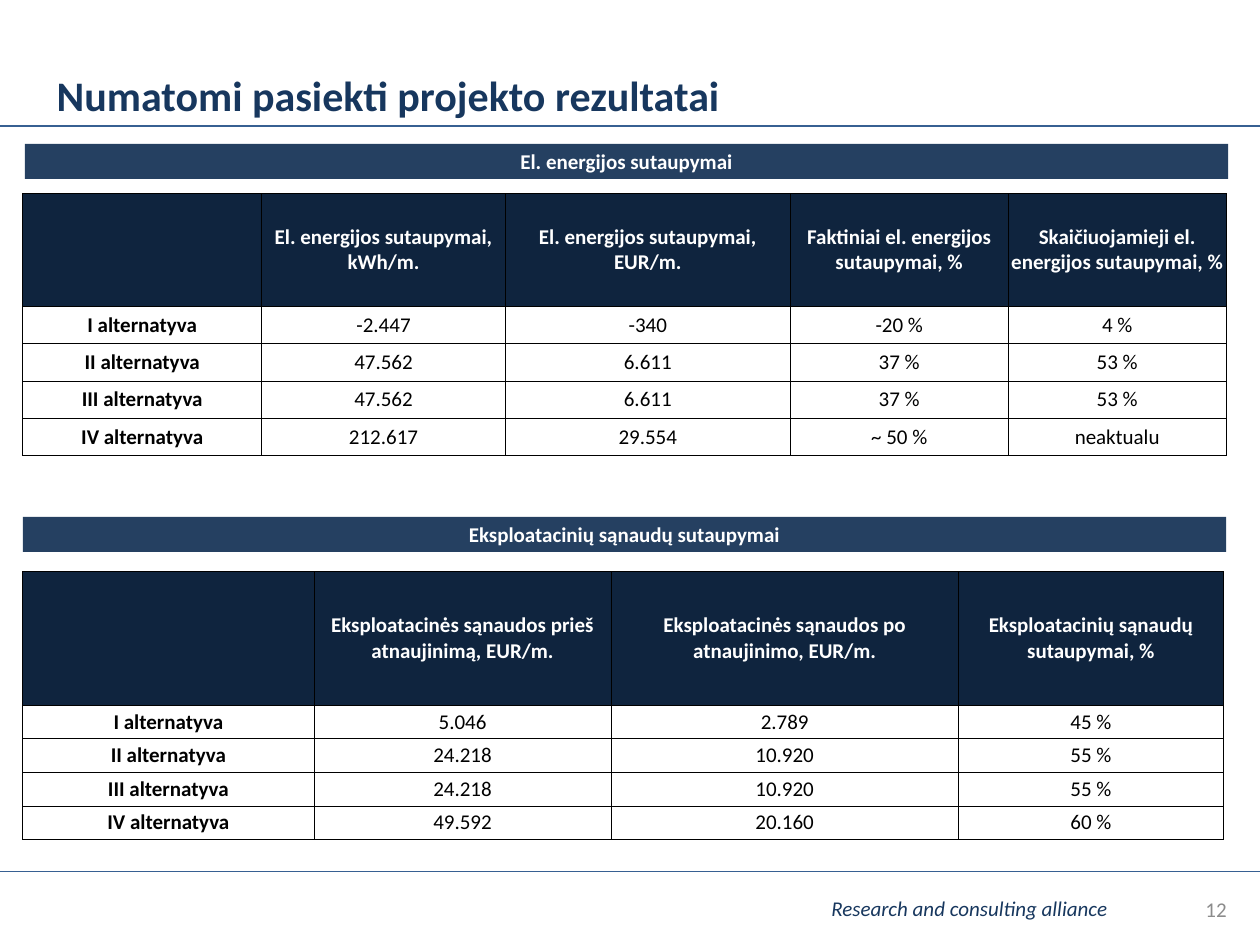
from pptx import Presentation
from pptx.dml.color import RGBColor
from pptx.enum import shapes, text
from pptx.oxml import parse_xml
from pptx.oxml.ns import nsdecls
from pptx.util import Pt

NAVY = RGBColor(0x17, 0x37, 0x5E)
RULE = RGBColor(0x37, 0x60, 0x92)
BAND = RGBColor(0x25, 0x40, 0x61)
HEAD = RGBColor(0x0F, 0x24, 0x3E)
GREY = RGBColor(0x8C, 0x8C, 0x8C)
WHITE = RGBColor(0xFF, 0xFF, 0xFF)
BLACK = RGBColor(0, 0, 0)

LEFT, CENTER, RIGHT = (text.PP_ALIGN.LEFT, text.PP_ALIGN.CENTER,
                       text.PP_ALIGN.RIGHT)
MIDDLE = text.MSO_ANCHOR.MIDDLE


class Deck:
    """Holds the style and the current slide; lengths are in points."""

    base = {"name": "Calibri", "size": Pt(12), "bold": False, "italic": False}

    def __init__(self, width, height):
        self.prs = Presentation()
        self.prs.slide_width, self.prs.slide_height = Pt(width), Pt(height)
        self.s = self.prs.slides.add_slide(self.prs.slide_layouts[5])

    def set_text(self, tf, words, color, align=LEFT, **fmt):
        tf.word_wrap = True
        tf.vertical_anchor = MIDDLE
        p = tf.paragraphs[0]
        p.alignment = align
        self.style_font(p.font, color, fmt)
        if words:
            r = p.add_run()
            r.text = words
            self.style_font(r.font, color, fmt)

    def style_font(self, font, color, fmt):
        for key, value in {**self.base, **fmt}.items():
            setattr(font, key, value)
        font.color.rgb = color

    def title(self, words, *box):
        sp = self.s.shapes.title
        sp.left, sp.top, sp.width, sp.height = map(Pt, box)
        self.set_text(sp.text_frame, words, NAVY, size=Pt(24), bold=True)

    def label(self, words, box, color, **fmt):
        sp = self.s.shapes.add_textbox(*map(Pt, box))
        self.set_text(sp.text_frame, words, color, **fmt)

    def rule(self, y):
        sp = self.s.shapes.add_connector(
            shapes.MSO_CONNECTOR.STRAIGHT, 0, Pt(y), self.prs.slide_width, Pt(y))
        sp.line.color.rgb, sp.line.width = RULE, Pt(1)
        sp._element.spPr.append(parse_xml(f"<a:effectLst {nsdecls('a')}/>"))

    def band(self, words, *box):
        sp = self.s.shapes.add_shape(shapes.MSO_SHAPE.RECTANGLE, *map(Pt, box))
        sp.shadow.inherit = False
        sp.fill.solid()
        sp.fill.fore_color.rgb = BAND
        sp.line.fill.background()
        self.set_text(sp.text_frame, words, WHITE, CENTER, bold=True)

    def borders(self, cell):
        pr = cell._tc.get_or_add_tcPr()
        for i, side in enumerate(("lnL", "lnR", "lnT", "lnB")):
            pr.insert(i, parse_xml(
                f'<a:{side} {nsdecls("a")} w="{Pt(0.5)}"><a:solidFill>'
                f'<a:srgbClr val="{BLACK}"/></a:solidFill></a:{side}>'))

    def table(self, rows, left, top, widths, head_height, row_height):
        heights = [head_height] + [row_height] * (len(rows) - 1)
        box = left, top, sum(widths), sum(heights)
        tbl = self.s.shapes.add_table(len(rows), len(widths), *map(Pt, box)).table
        tbl.first_row = tbl.horz_banding = False
        for col, width in zip(tbl.columns, widths):
            col.width = Pt(width)
        for row, height in zip(tbl.rows, heights):
            row.height = Pt(height)
        for i, row in enumerate(rows):
            for j, words in enumerate(row):
                cell = tbl.cell(i, j)
                for side in ("left", "right", "top", "bottom"):
                    setattr(cell, f"margin_{side}", 0)
                cell.vertical_anchor = MIDDLE
                if i == 0:
                    cell.fill.solid()
                    cell.fill.fore_color.rgb = HEAD
                else:
                    cell.fill.background()
                self.borders(cell)
                # The cell, not its text frame, carries the anchor
                self.set_text(cell.text_frame, words, BLACK if i else WHITE,
                              CENTER, bold=i == 0 or j == 0)


ENERGY = [
    ["", "El. energijos sutaupymai, kWh/m.", "El. energijos sutaupymai, EUR/m.",
     "Faktiniai el. energijos sutaupymai, %",
     "Skaičiuojamieji el. energijos sutaupymai, %"],
    ["I alternatyva", "-2.447", "-340", "-20 %", "4 %"],
    ["II alternatyva", "47.562", "6.611", "37 %", "53 %"],
    ["III alternatyva", "47.562", "6.611", "37 %", "53 %"],
    ["IV alternatyva", "212.617", "29.554", "~ 50 %", "neaktualu"],
]
COSTS = [
    ["", "Eksploatacinės sąnaudos prieš atnaujinimą, EUR/m.",
     "Eksploatacinės sąnaudos po atnaujinimo, EUR/m.",
     "Eksploatacinių sąnaudų sutaupymai, %"],
    ["I alternatyva", "5.046", "2.789", "45 %"],
    ["II alternatyva", "24.218", "10.920", "55 %"],
    ["III alternatyva", "24.218", "10.920", "55 %"],
    ["IV alternatyva", "49.592", "20.160", "60 %"],
]


def main():
    d = Deck(720, 540)

    # Frame: rules, footer and slide number
    d.rule(72)
    d.rule(498)
    d.label("Research and consulting alliance", (468, 508.5, 249, 21), NAVY,
            italic=True)
    d.label("12", (540, 505, 168, 29), GREY, align=RIGHT)
    d.title("Numatomi pasiekti projekto rezultatai", 25.2, 35.3, 648, 38)

    # Energy savings
    d.band("El. energijos sutaupymai", 14.2, 82.2, 687.6, 20)
    d.table(ENERGY, 13, 110.6, [136.6, 139.2, 162.8, 124.6, 124.6], 64.4, 21.4)

    # Running cost savings
    d.band("Eksploatacinių sąnaudų sutaupymai", 13, 295.4, 687.6, 20)
    d.table(COSTS, 13, 326.6, [166.5, 169.7, 198.5, 151.5], 76.4, 19.2)

    d.prs.save("out.pptx")


if __name__ == "__main__":
    main()
